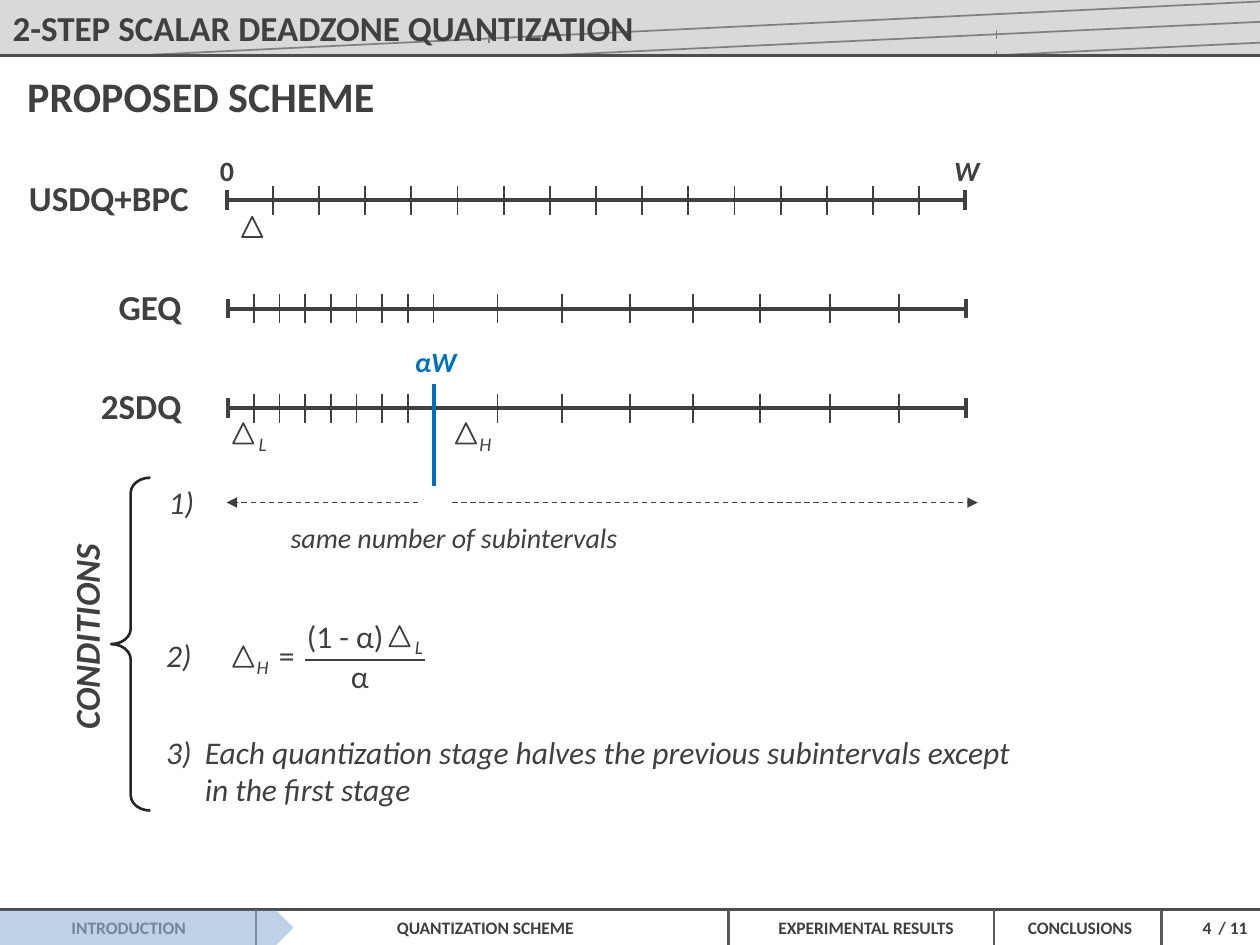
from lxml.etree import SubElement
from pptx import Presentation
from pptx.dml.color import RGBColor
from pptx.enum.dml import MSO_LINE
from pptx.enum.shapes import MSO_CONNECTOR, MSO_SHAPE
from pptx.enum.text import MSO_ANCHOR, MSO_AUTO_SIZE, PP_ALIGN
from pptx.oxml.ns import qn
from pptx.util import Cm, Pt

WHITE = RGBColor(0xFF, 0xFF, 0xFF)
BAND = RGBColor(0xD9, 0xD9, 0xD9)
INK = RGBColor(0x40, 0x40, 0x40)
BRACE = RGBColor(0x26, 0x26, 0x26)
RULE = RGBColor(0x4D, 0x4D, 0x4D)
DIVIDER = RGBColor(0x59, 0x59, 0x59)
DECOR = RGBColor(0x80, 0x80, 0x80)
BLUE = RGBColor(0x00, 0x70, 0xC0)
VEIL = RGBColor(0x95, 0xB3, 0xD7)
FONT = "Calibri"
SLIDE_W, SLIDE_H = 25.4, 19.05
FOOTER_TOP = 18.34
ALPHA_W = 8.74  # where the two quantization steps meet


def format_text(frame, size, color=INK, bold=False, italic=False, align=PP_ALIGN.LEFT):
    frame.vertical_anchor = MSO_ANCHOR.MIDDLE
    for paragraph in frame.paragraphs:
        paragraph.alignment = align
        for run in paragraph.runs:
            run.font.name, run.font.size = FONT, Pt(size)
            run.font.bold, run.font.italic = bold, italic
            run.font.color.rgb = color


def add_label(slide, text, left, top, width, height, size, **style):
    label = slide.shapes.add_textbox(Cm(left), Cm(top), Cm(width), Cm(height))
    frame = label.text_frame
    frame.text = text
    frame.word_wrap = False
    frame.auto_size = MSO_AUTO_SIZE.SHAPE_TO_FIT_TEXT
    format_text(frame, size, **style)
    return frame


def add_line(slide, x1, y1, x2, y2, color=INK, width=1.0):
    line = slide.shapes.add_connector(
        MSO_CONNECTOR.STRAIGHT, Cm(x1), Cm(y1), Cm(x2), Cm(y2))
    line.line.color.rgb = color
    line.line.width = Pt(width)
    SubElement(line._element.spPr, qn("a:effectLst"))
    return line


def add_arrow(slide, x1, x2, y):
    arrow = add_line(slide, x1, y, x2, y, width=0.75)
    arrow.line.dash_style = MSO_LINE.DASH
    SubElement(arrow.line._get_or_add_ln(), qn("a:tailEnd"), type="triangle")


def add_form(slide, kind, left, top, width, height, fill=None, outline=None, weight=1.0):
    form = slide.shapes.add_shape(kind, Cm(left), Cm(top), Cm(width), Cm(height))
    form.shadow.inherit = False
    if fill is None:
        form.fill.background()
    else:
        form.fill.solid()
        form.fill.fore_color.rgb = fill
    if outline is None:
        form.line.fill.background()
    else:
        form.line.color.rgb = outline
        form.line.width = Pt(weight)
    return form


def add_panel(slide, text, left, top, width, height, size=18, **style):
    panel = add_form(slide, MSO_SHAPE.RECTANGLE, left, top, width, height, WHITE)
    panel.text_frame.text = text
    panel.text_frame.word_wrap = True
    format_text(panel.text_frame, size, italic=True, **style)
    return panel


def add_delta(slide, left, top, subscript=None):
    add_form(slide, MSO_SHAPE.ISOSCELES_TRIANGLE, left, top, 0.41, 0.41, outline=INK)
    if subscript:
        frame = add_label(slide, subscript, left + 0.3, top + 0.05, 0.46, 0.74, 11,
                          italic=True, align=PP_ALIGN.CENTER)
        frame.margin_left = Cm(0.13)
        frame.margin_right = frame.margin_top = frame.margin_bottom = 0


def add_scale(slide, name, label_left, label_width, start, end, y, ticks):
    add_label(slide, name, label_left, y - 0.61, label_width, 1.12, 20,
              bold=True, align=PP_ALIGN.RIGHT)
    add_line(slide, start, y, end, y, width=2.25)
    for x in (start, end):
        add_line(slide, x, y - 0.2, x, y + 0.2, width=2.25)
    for x in ticks:
        add_line(slide, x, y - 0.29, x, y + 0.29)


def add_header(slide):
    add_form(slide, MSO_SHAPE.RECTANGLE, 0, 0, SLIDE_W, 1.09, BAND)
    # Slanted lines and their small ticks
    for x, y, end_y in ((1.24, 1.19, 0.03), (1.42, 1.57, 0.44), (1.42, 2.01, 0.86)):
        add_line(slide, x, y, SLIDE_W, end_y, DECOR)
    for x, y in ((20.09, 0.61), (9.86, 0.69), (9.78, 1.09), (20.09, 1.03)):
        add_line(slide, x, y, x, y + 0.17, DECOR)
    add_form(slide, MSO_SHAPE.RECTANGLE, 0, 1.14, SLIDE_W, 1.57, WHITE)
    add_line(slide, 0, 1.12, SLIDE_W, 1.12, RULE, 1.5)

    # Title, raised above the band
    title = slide.shapes.title
    slide.shapes._spTree.append(title._element)
    title.left, title.top, title.width, title.height = Cm(0), Cm(0), Cm(13.13), Cm(1.12)
    title.text_frame.text = "2-STEP SCALAR DEADZONE QUANTIZATION"
    title.text_frame.word_wrap = False
    title.text_frame.auto_size = MSO_AUTO_SIZE.NONE
    format_text(title.text_frame, 20, bold=True)
    add_label(slide, "PROPOSED SCHEME", 0.3, 1.3, 7.59, 1.27, 24, bold=True)


def add_footer(slide):
    add_line(slide, 0, FOOTER_TOP, SLIDE_W, FOOTER_TOP, RULE, 1.5)
    for x in (5.16, 14.68, 20.04, 23.42):
        add_line(slide, x, FOOTER_TOP, x, SLIDE_H, DIVIDER, 1.5)
    for text, left, width, align in (
            ("INTRODUCTION", 1.19, 2.84, PP_ALIGN.LEFT),
            ("QUANTIZATION SCHEME", 7.75, 4.17, PP_ALIGN.LEFT),
            ("EXPERIMENTAL RESULTS", 15.44, 4.17, PP_ALIGN.LEFT),
            ("CONCLUSIONS", 20.47, 2.67, PP_ALIGN.LEFT),
            ("4", 23.98, 0.69, PP_ALIGN.RIGHT),
            ("/ 11", 24.28, 1.12, PP_ALIGN.RIGHT)):
        add_label(slide, text, left, 18.36, width, 0.69, 10, bold=True, align=align)
    # Translucent veil over the finished section
    veil = add_form(slide, MSO_SHAPE.PENTAGON, 0, 18.36, 5.92, 0.69, VEIL)
    color = veil._element.spPr.find(qn("a:solidFill")).find(qn("a:srgbClr"))
    SubElement(color, qn("a:alpha"), val="60000")


def add_scales(slide):
    # Uniform scale: 16 equal intervals
    start, end = 4.57, 19.46
    uniform = [start + (end - start) * i / 16 for i in range(1, 16)]
    add_scale(slide, "USDQ+BPC", 0.3, 3.76, start, end, 4.04, uniform)
    add_delta(slide, 4.88, 4.37)
    add_label(slide, "0", 4.17, 2.97, 0.81, 0.94, 16, bold=True, align=PP_ALIGN.CENTER)
    add_label(slide, "W", 18.97, 2.97, 1.04, 0.94, 16, bold=True, italic=True,
              align=PP_ALIGN.CENTER)

    # Two-step scales: 8 fine intervals up to αW, then 8 coarse ones
    start, end = 4.6, 19.48
    fine = [start + (ALPHA_W - start) * i / 8 for i in range(1, 9)]
    two_step = fine + [10.03, 11.33, 12.7, 13.97, 15.32, 16.74, 18.12]
    add_scale(slide, "GEQ", 2.11, 1.8, start, end, 6.22, two_step)
    add_scale(slide, "2SDQ", 1.75, 2.16, start, end, 8.23, two_step)
    add_delta(slide, 4.7, 8.53, "L")
    add_delta(slide, 9.19, 8.53, "H")
    add_line(slide, ALPHA_W, 7.75, ALPHA_W, 9.8, BLUE, 2.25)
    add_label(slide, "αW", 8.1, 6.81, 1.37, 0.94, 16, color=BLUE, bold=True,
              italic=True, align=PP_ALIGN.CENTER)


def add_conditions(slide):
    # Condition 1
    add_panel(slide, "1)", 3.15, 9.73, 1.14, 0.79)
    add_arrow(slide, 8.43, 4.57, 10.13)
    add_arrow(slide, 9.12, 19.71, 10.13)
    add_label(slide, "same number of subintervals", 5.51, 10.36, 7.19, 0.94, 16,
              italic=True, align=PP_ALIGN.RIGHT)

    # Condition 2: formula
    add_panel(slide, "2)", 3.1, 12.8, 1.14, 0.79)
    add_delta(slide, 4.7, 13.03, "H")
    add_delta(slide, 7.85, 12.62, "L")
    add_line(slide, 6.15, 13.31, 8.56, 13.31)
    for text, left, top, width in (("=", 5.36, 12.7, 0.84),
                                   ("(1 - α)", 5.92, 12.32, 2.08),
                                   ("α", 6.81, 13.11, 0.89)):
        add_label(slide, text, left, top, width, 1.02, 18, align=PP_ALIGN.CENTER)

    # Condition 3: hanging number
    halving = add_panel(
        slide, "3)\tEach quantization stage halves the previous subintervals except\n"
        "in the first stage", 3.1, 14.73, 19, 1.6)
    for paragraph, indent in zip(halving.text_frame.paragraphs, (Cm(-0.78), 0)):
        properties = paragraph._p.get_or_add_pPr()
        properties.set("marL", str(Cm(0.78)))
        properties.set("indent", str(indent))

    # Heading and brace
    heading = add_panel(slide, "CONDITIONS", -1.57, 12.01, 6.6, 1.65, 20, bold=True,
                        align=PP_ALIGN.CENTER)
    heading.rotation = 270
    brace = add_form(slide, MSO_SHAPE.LEFT_BRACE, 2.24, 9.63, 0.79, 6.71,
                     outline=BRACE, weight=1.5)
    brace.adjustments[0] = 0.39


def main():
    presentation = Presentation()
    presentation.slide_width, presentation.slide_height = Cm(SLIDE_W), Cm(SLIDE_H)
    slide = presentation.slides.add_slide(presentation.slide_layouts[5])
    add_header(slide)
    add_scales(slide)
    add_conditions(slide)
    add_footer(slide)
    presentation.save("out.pptx")


if __name__ == "__main__":
    main()
